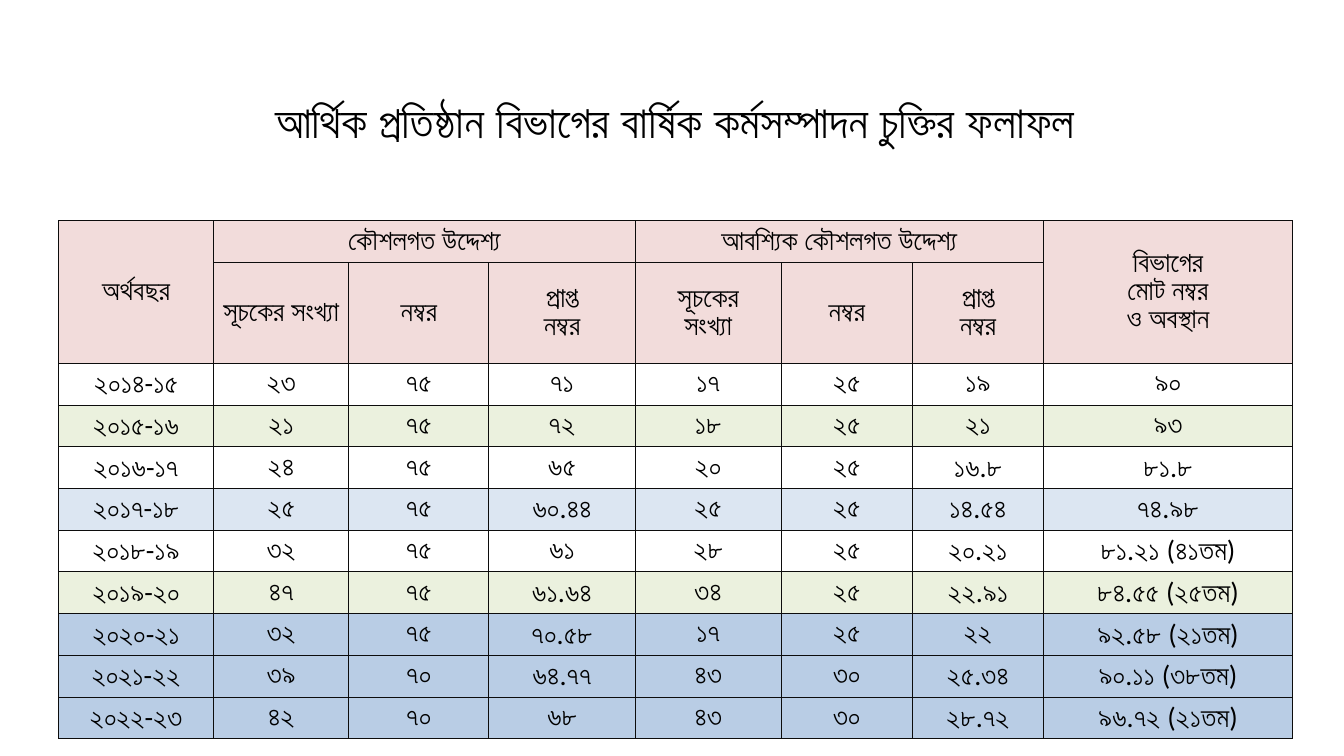
import pptx
import pptx.dml.color
import pptx.enum.text
import pptx.oxml
import pptx.oxml.ns
import pptx.util

Inches = pptx.util.Inches

COLORS = {
    "text": "000000", "border": "0C0C0C", "header": "F2DCDB", "white": "FFFFFF",
    "green": "EBF1DE", "pale_blue": "DCE6F2", "blue": "B9CDE5",
}
FONT = "Calibri"
TITLE = "আর্থিক প্রতিষ্ঠান বিভাগের বার্ষিক কর্মসম্পাদন চুক্তির ফলাফল"

# (row, column, rows spanned, columns spanned, text)
HEADERS = [
    (0, 0, 2, 1, "অর্থবছর"),
    (0, 1, 1, 3, "কৌশলগত উদ্দেশ্য"),
    (0, 4, 1, 3, "আবশ্যিক কৌশলগত উদ্দেশ্য"),
    (0, 7, 2, 1, "বিভাগের\nমোট নম্বর\nও অবস্থান"),
    (1, 1, 1, 1, "সূচকের সংখ্যা"),
    (1, 2, 1, 1, "নম্বর"),
    (1, 3, 1, 1, "প্রাপ্ত\nনম্বর"),
    (1, 4, 1, 1, "সূচকের\nসংখ্যা"),
    (1, 5, 1, 1, "নম্বর"),
    (1, 6, 1, 1, "প্রাপ্ত\nনম্বর"),
]
RESULTS = [
    ("white", ["২০১৪-১৫", "২৩", "৭৫", "৭১", "১৭", "২৫", "১৯", "৯০"]),
    ("green", ["২০১৫-১৬", "২১", "৭৫", "৭২", "১৮", "২৫", "২১", "৯৩"]),
    ("white", ["২০১৬-১৭", "২৪", "৭৫", "৬৫", "২০", "২৫", "১৬.৮", "৮১.৮"]),
    ("pale_blue", ["২০১৭-১৮", "২৫", "৭৫", "৬০.৪৪", "২৫", "২৫", "১৪.৫৪", "৭৪.৯৮"]),
    ("white", ["২০১৮-১৯", "৩২", "৭৫", "৬১", "২৮", "২৫", "২০.২১", "৮১.২১ (৪১তম)"]),
    ("green", ["২০১৯-২০", "৪৭", "৭৫", "৬১.৬৪", "৩৪", "২৫", "২২.৯১", "৮৪.৫৫ (২৫তম)"]),
    ("blue", ["২০২০-২১", "৩২", "৭৫", "৭০.৫৮", "১৭", "২৫", "২২", "৯২.৫৮ (২১তম)"]),
    ("blue", ["২০২১-২২", "৩৯", "৭০", "৬৪.৭৭", "৪৩", "৩০", "২৫.৩৪", "৯০.১১ (৩৮তম)"]),
    ("blue", ["২০২২-২৩", "৪২", "৭০", "৬৮", "৪৩", "৩০", "২৮.৭২", "৯৬.৭২ (২১তম)"]),
]
COLUMN_WIDTHS = [1.54, 1.34, 1.39, 1.45, 1.45, 1.3, 1.3, 2.47]
ROW_HEIGHT = 0.414
SUBHEADER_HEIGHT = 0.83


def rgb(name):
    return pptx.dml.color.RGBColor.from_string(COLORS[name])


def write(frame, text, size, bold=False):
    frame.text = text
    for paragraph in frame.paragraphs:
        paragraph.alignment = pptx.enum.text.PP_ALIGN.CENTER
        for run in paragraph.runs:
            run.font.name = FONT
            run.font.size = pptx.util.Pt(size)
            run.font.bold = bold
            run.font.color.rgb = rgb("text")


def style_cell(cell, fill):
    """Give the cell its fill, no margins, and a thin line on every side."""
    cell.margin_left = cell.margin_right = cell.margin_top = cell.margin_bottom = 0
    cell.vertical_anchor = pptx.enum.text.MSO_ANCHOR.MIDDLE
    properties = cell._tc.get_or_add_tcPr()
    for side in ("lnL", "lnR", "lnT", "lnB"):
        properties.append(pptx.oxml.parse_xml(
            f'<a:{side} {pptx.oxml.ns.nsdecls("a")} w="{pptx.util.Pt(0.75)}"><a:solidFill>'
            f'<a:srgbClr val="{COLORS["border"]}"/></a:solidFill></a:{side}>'))
    cell.fill.solid()
    cell.fill.fore_color.rgb = rgb(fill)


def add_title(slide):
    frame = slide.shapes.add_textbox(
        Inches(0.03), Inches(0.74), Inches(13.33), Inches(0.92)).text_frame
    frame.word_wrap = True
    frame.vertical_anchor = pptx.enum.text.MSO_ANCHOR.MIDDLE
    write(frame, TITLE, 32, bold=True)


def add_results(slide):
    row_heights = [ROW_HEIGHT, SUBHEADER_HEIGHT] + [ROW_HEIGHT] * len(RESULTS)
    table = slide.shapes.add_table(
        len(row_heights), len(COLUMN_WIDTHS), Inches(0.58), Inches(2.19),
        Inches(sum(COLUMN_WIDTHS)), Inches(sum(row_heights))).table
    table.first_row = table.horz_banding = False
    for column, width in zip(table.columns, COLUMN_WIDTHS):
        column.width = Inches(width)
    fills = ["header", "header"] + [fill for fill, _ in RESULTS]
    for row, height, fill in zip(table.rows, row_heights, fills):
        row.height = Inches(height)
        for cell in row.cells:
            style_cell(cell, fill)

    for row, column, row_span, column_span, text in HEADERS:
        cell = table.cell(row, column)
        if row_span * column_span > 1:
            cell.merge(table.cell(row + row_span - 1, column + column_span - 1))
        write(cell.text_frame, text, 20)
    for row, (_, values) in enumerate(RESULTS, start=2):
        for column, value in enumerate(values):
            write(table.cell(row, column).text_frame, value, 20)


presentation = pptx.Presentation()
presentation.slide_width, presentation.slide_height = Inches(13.33), Inches(7.5)
results_slide = presentation.slides.add_slide(presentation.slide_layouts[6])
add_title(results_slide)
add_results(results_slide)
presentation.save("out.pptx")
